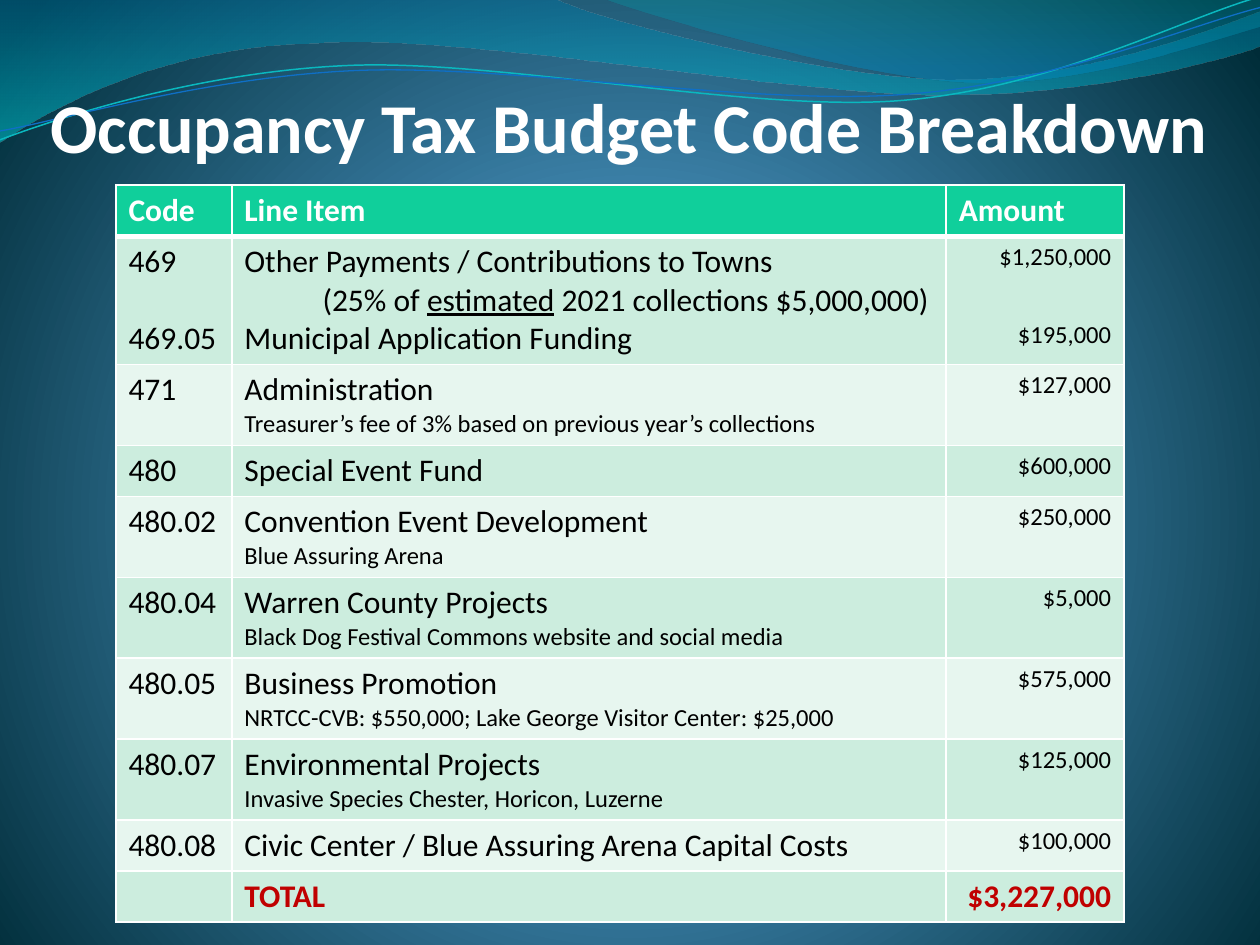
from pptx import Presentation, util as u
from pptx.dml.color import RGBColor
from pptx.enum import text
from pptx.oxml import parse_xml
from pptx.oxml.ns import nsdecls, qn

TOWNS = [("Other Payments / Contributions to Towns", {}),
         ("(25% of |estimated| 2021 collections $5,000,000)", {"indent": 0.62}),
         ("Municipal Application Funding", {})]
SMALL = {"size": 14}
RIGHT = {"size": 14, "align": text.PP_ALIGN.RIGHT}
TOTAL = {"color": "C00000", "bold": True}

BUDGET = [
    ("471", "Administration",
     "Treasurer’s fee of 3% based on previous year’s collections", "$127,000"),
    ("480", "Special Event Fund", "", "$600,000"),
    ("480.02", "Convention Event Development", "Blue Assuring Arena", "$250,000"),
    ("480.04", "Warren County Projects",
     "Black Dog Festival Commons website and social media", "$5,000"),
    ("480.05", "Business Promotion",
     "NRTCC-CVB: $550,000; Lake George Visitor Center: $25,000", "$575,000"),
    ("480.07", "Environmental Projects",
     "Invasive Species Chester, Horicon, Luzerne", "$125,000"),
    ("480.08", "Civic Center / Blue Assuring Arena Capital Costs", "", "$100,000"),
]

WAVES = [
    ((0, 0),
     [(4.4, -0.01), (4.76, 0.17, 6.64, 0.63, 7.58, 0.63),
      (8.53, 0.63, 9.58, 0.26, 10, 0.09), (10.01, 0.36),
      (9.83, 0.44, 8.7, 0.76, 7.46, 0.75), (6.22, 0.75, 3.82, 0.28, 2.57, 0.34),
      (1.29, 0.36, 0.46, 0.83, -0.01, 1.13), (0, 0)],
     [(0, "0074A1", 45), (100, "00C6CF", 55)]),
    ((4.79, -0.01),
     [(5.09, 0.11, 6.82, 0.62, 7.69, 0.65), (8.56, 0.69, 9.61, 0.32, 10, 0.21),
      (10, 0), (4.79, -0.01)],
     [(0, "00A1A9", 30), (80, "008BBF", 45)]),
]

STRANDS = [
    ((0, 1.11),
     [(0.48, 0.93, 1.58, 0.57, 2.77, 0.52), (3.95, 0.47, 5.93, 0.89, 7.13, 0.8),
      (8.33, 0.71, 9.38, 0.15, 9.98, -0.02)], "0AB8BF", 0.85),
    ((0, 1.04),
     [(0.47, 0.96, 1.64, 0.61, 2.83, 0.56), (4.03, 0.51, 5.97, 0.84, 7.17, 0.75),
      (8.36, 0.67, 9.41, 0.21, 10, 0.06)], "0F6FC6", 0.75),
]


def rgb(value):
    return RGBColor.from_string(value)


class Deck:
    font = "Calibri"
    white = "FFFFFF"
    header = "10CF9B"
    bands = ("E7F6EF", "CCEDDE")

    def __init__(self, width, height):
        self.prs = Presentation()
        self.prs.slide_width, self.prs.slide_height = u.Inches(width), u.Inches(height)
        self.s = self.prs.slides.add_slide(self.prs.slide_layouts[5])

    def gradient(self, fill, owner, stops, direction):
        fill.gradient()
        old = next(owner.iter(qn("a:gradFill")))
        marks = "".join(
            f'<a:gs pos="{pos * 1000}"><a:srgbClr val="{color}">'
            f'<a:alpha val="{alpha * 1000}"/></a:srgbClr></a:gs>'
            for pos, color, alpha in stops)
        old.getparent().replace(old, parse_xml(
            f'<a:gradFill {nsdecls("a")} rotWithShape="1"><a:gsLst>{marks}</a:gsLst>'
            f'{direction}</a:gradFill>'))

    def background(self, stops):
        self.gradient(self.s.background.fill, self.s._element, stops,
                      '<a:path path="circle"><a:fillToRect l="10000" t="110000" '
                      'r="10000" b="100000"/></a:path>')

    def outline(self, start, segments, close):
        anchors = [(u.Inches(seg[-2]), u.Inches(seg[-1])) for seg in segments]
        builder = self.s.shapes.build_freeform(*map(u.Inches, start))
        builder.add_line_segments(anchors, close=close)
        sp = builder.convert_to_shape()
        sp.shadow.inherit = False
        for line, seg in zip(list(sp._element.iter(qn("a:lnTo"))), segments):
            if len(seg) == 6:
                points = "".join(
                    f'<a:pt x="{u.Inches(x) - sp.left}" y="{u.Inches(y) - sp.top}"/>'
                    for x, y in zip(seg[::2], seg[1::2]))
                line.getparent().replace(line, parse_xml(
                    f'<a:cubicBezTo {nsdecls("a")}>{points}</a:cubicBezTo>'))
        return sp

    def wave(self, start, segments, stops):
        sp = self.outline(start, segments, True)
        sp.line.fill.background()
        self.gradient(sp.fill, sp._element, stops, '<a:lin ang="5400000" scaled="0"/>')

    def strand(self, start, segments, color, width):
        sp = self.outline(start, segments, False)
        sp.fill.background()
        sp.line.color.rgb = rgb(color)
        sp.line.width = u.Pt(width)

    def paragraph(self, p, content, size=18, color="000000", bold=False,
                  align=text.PP_ALIGN.LEFT, before=0, indent=0):
        p.alignment = align
        if before:
            p.space_before = u.Pt(before)
        if indent:
            p._p.get_or_add_pPr().set("marL", str(u.Inches(indent)))
        for i, part in enumerate(content.split("|")):
            r = p.add_run()
            r.text = part
            style = {"name": self.font, "size": u.Pt(size), "bold": bold,
                     "underline": i % 2 == 1}
            for key, value in style.items():
                setattr(r.font, key, value)
            r.font.color.rgb = rgb(color)

    def title(self, content, left, top, width, height):
        sp = self.s.shapes.title
        box = {"left": left, "top": top, "width": width, "height": height}
        for key, value in box.items():
            setattr(sp, key, u.Inches(value))
        tf = sp.text_frame
        frame = {"margin_left": 0, "margin_right": u.Inches(0.02), "margin_top": 0,
                 "margin_bottom": 0, "word_wrap": True,
                 "auto_size": text.MSO_AUTO_SIZE.NONE,
                 "vertical_anchor": text.MSO_ANCHOR.BOTTOM}
        for key, value in frame.items():
            setattr(tf, key, value)
        self.paragraph(tf.paragraphs[0], content, 40, self.white, True,
                       text.PP_ALIGN.CENTER)
        self.s.shapes._spTree.append(sp._element)

    def cell(self, cell, lines, fill, top, bottom):
        tcPr = cell._tc.get_or_add_tcPr()
        for side, width in {"L": 1, "R": 1, "T": top, "B": bottom}.items():
            tcPr.append(parse_xml(
                f'<a:ln{side} {nsdecls("a")} w="{u.Pt(width)}"><a:solidFill>'
                f'<a:srgbClr val="{self.white}"/></a:solidFill></a:ln{side}>'))
        cell.fill.solid()
        cell.fill.fore_color.rgb = rgb(fill)
        tf = cell.text_frame
        for i, (content, style) in enumerate(lines):
            p = tf.add_paragraph() if i else tf.paragraphs[0]
            self.paragraph(p, content, **style)

    def table(self, rows, left, top, widths, heights):
        frame = self.s.shapes.add_table(len(rows), len(widths), u.Inches(left),
                                        u.Inches(top), u.Inches(sum(widths)),
                                        u.Inches(sum(heights)))
        table = frame.table
        for column, width in zip(table.columns, widths):
            column.width = u.Inches(width)
        for i, (row, height) in enumerate(zip(rows, heights)):
            table.rows[i].height = u.Inches(height)
            fill = self.bands[i % 2] if i else self.header
            for j, lines in enumerate(row):
                self.cell(table.cell(i, j), lines, fill,
                          3 if i == 1 else 1, 3 if i == 0 else 1)


def budget_rows():
    head = {"color": Deck.white, "bold": True}
    rows = [[[(name, head)] for name in ("Code", "Line Item", "Amount")],
            [[("469", {}), ("469.05", {"before": 22})], TOWNS,
             [("$1,250,000", RIGHT), ("$195,000", {**RIGHT, "before": 27})]]]
    for code, item, detail, amount in BUDGET:
        lines = [(item, {})] + ([(detail, SMALL)] if detail else [])
        rows.append([[(code, {})], lines, [(amount, RIGHT)]])
    rows.append([[], [("TOTAL", TOTAL)],
                 [("$3,227,000", {**TOTAL, "align": text.PP_ALIGN.RIGHT})]])
    return rows


def main():
    deck = Deck(10, 7.5)
    deck.background([(0, "4AA0D6", 100), (25, "4C98C7", 100), (100, "002C38", 100)])
    for wave in WAVES:
        deck.wave(*wave)
    for strand in STRANDS:
        deck.strand(*strand)
    deck.title("Occupancy Tax Budget Code Breakdown", 0, 0.66, 10, 0.67)
    rows = budget_rows()
    line_heights = {1: 0.4, 2: 0.64, 3: 1}
    heights = [line_heights[len(row[1])] for row in rows]
    deck.table(rows, 0.92, 1.47, [0.92, 5.67, 1.41], heights)
    deck.prs.save("out.pptx")


if __name__ == "__main__":
    main()
